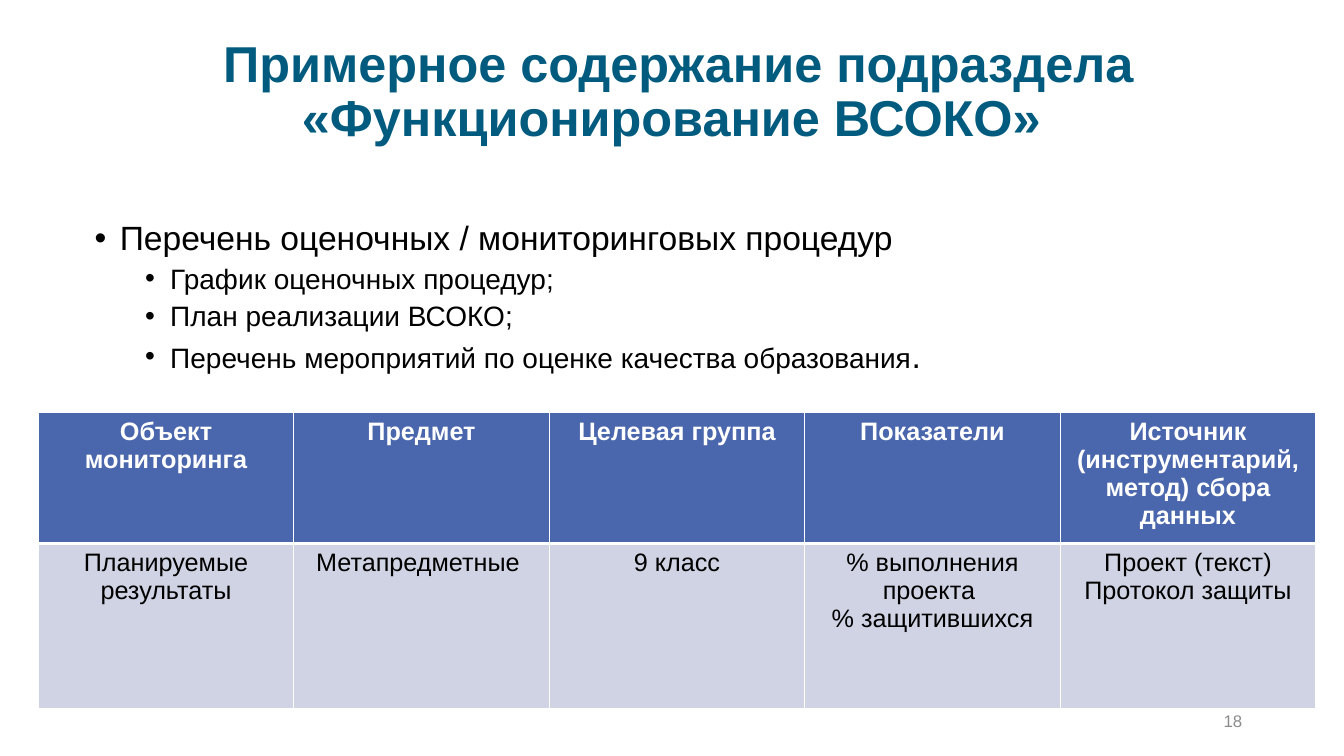
import pptx
import pptx.util
import pptx.dml.color
import pptx.enum.text
import pptx.oxml
import pptx.oxml.ns
from lxml import etree

Inches, Pt = pptx.util.Inches, pptx.util.Pt
ALIGN = pptx.enum.text.PP_ALIGN
ANCHOR = pptx.enum.text.MSO_ANCHOR
COLORS = {"title": "005B7E", "text": "000000", "muted": "8C8C8C",
          "white": "FFFFFF", "header": "4A66AC", "row": "D0D3E3"}

BULLETS = [
    (0, [("Перечень оценочных / мониторинговых процедур", 24)]),
    (1, [("График оценочных процедур;", 20)]),
    (1, [("План реализации ВСОКО;", 20)]),
    (1, [("Перечень мероприятий по оценке качества образования", 20), (".", 24)]),
]
HEADERS = ["Объект мониторинга", "Предмет", "Целевая группа", "Показатели",
           "Источник (инструментарий, метод) сбора данных"]
RESULTS = ["Планируемые результаты", "Метапредметные ", "9 класс",
           "% выполнения проекта \n% защитившихся",
           "Проект (текст)\nПротокол защиты"]


def rgb(name):
    return pptx.dml.color.RGBColor.from_string(COLORS[name])


def add_text(p, text, size=18, color="text", bold=False, align=None):
    r = p.add_run()
    r.text = text
    r.font.name = "Arial"
    r.font.size = Pt(size)
    r.font.bold = bold
    r.font.color.rgb = rgb(color)
    if align is not None:
        p.alignment = align


def add_bullet(p, level):
    p.level = level
    pPr = p._p.get_or_add_pPr()
    pPr.set("marL", str(Inches(0.25 + 0.5 * level)))
    pPr.set("indent", str(Inches(-0.25)))
    ns = pptx.oxml.ns.qn
    etree.SubElement(pPr, ns("a:buFont")).set("typeface", "Arial")
    etree.SubElement(pPr, ns("a:buChar")).set("char", "•")


def set_borders(cell, top, bottom):
    tcPr = cell._tc.get_or_add_tcPr()
    sides = {"L": 1, "R": 1, "T": top, "B": bottom}
    for i, (side, width) in enumerate(sides.items()):
        tcPr.insert(i, pptx.oxml.parse_xml(
            f'<a:ln{side} {pptx.oxml.ns.nsdecls("a")} w="{Pt(width)}">'
            f'<a:solidFill><a:srgbClr val="{COLORS["white"]}"/></a:solidFill>'
            f'</a:ln{side}>'))


def place_title(slide, x, y, w, h):
    sp = slide.shapes.title
    sp.left, sp.top, sp.width, sp.height = map(Inches, (x, y, w, h))
    tf = sp.text_frame
    tf.word_wrap = True
    tf.auto_size = pptx.enum.text.MSO_AUTO_SIZE.NONE
    tf.vertical_anchor = ANCHOR.MIDDLE
    p = tf.paragraphs[0]
    p.line_spacing = 0.9
    add_text(p, "Примерное содержание подраздела «Функционирование ВСОКО» ",
             size=36, color="title", bold=True, align=ALIGN.CENTER)


def add_box(slide, x, y, w, h):
    tf = slide.shapes.add_textbox(*map(Inches, (x, y, w, h))).text_frame
    tf.word_wrap = True
    return tf


def add_procedures(slide, x, y, w, h):
    tf = add_box(slide, x, y, w, h)
    for i, (level, parts) in enumerate(BULLETS):
        p = tf.add_paragraph() if i else tf.paragraphs[0]
        add_bullet(p, level)
        p.line_spacing = 0.9
        p.space_before = Pt(5 if i else 0)
        for text, size in parts:
            add_text(p, text, size=size)


def add_monitoring_table(slide, x, y, w, heights):
    shape = slide.shapes.add_table(
        2, len(HEADERS), *map(Inches, (x, y, w, sum(heights))))
    table = shape.table
    for col in table.columns:
        col.width = Inches(w / len(HEADERS))
    rows = [(HEADERS, "header", "white", True, 1, 3),
            (RESULTS, "row", "text", False, 3, 1)]
    for r, (texts, fill, color, bold, top, bottom) in enumerate(rows):
        table.rows[r].height = Inches(heights[r])
        for c, text in enumerate(texts):
            cell = table.cell(r, c)
            cell.fill.solid()
            cell.fill.fore_color.rgb = rgb(fill)
            set_borders(cell, top, bottom)
            tf = cell.text_frame
            for i, line in enumerate(text.split("\n")):
                p = tf.add_paragraph() if i else tf.paragraphs[0]
                add_text(p, line, color=color, bold=bold, align=ALIGN.CENTER)


def add_page_number(slide, x, y, w, h):
    tf = add_box(slide, x, y, w, h)
    tf.vertical_anchor = ANCHOR.MIDDLE
    add_text(tf.paragraphs[0], "18", size=12, color="muted", align=ALIGN.RIGHT)


def main():
    prs = pptx.Presentation()
    prs.slide_width, prs.slide_height = Inches(13.33), Inches(7.5)
    slide = prs.slides.add_slide(prs.slide_layouts[5])
    place_title(slide, 0.98, 0.2, 11.5, 1.45)
    add_procedures(slide, 0.84, 2.15, 11.5, 1.74)
    add_page_number(slide, 9.42, 6.95, 3, 0.4)
    add_monitoring_table(slide, 0.38, 4.09, 12.67, (1.21, 1.64))
    prs.save("out.pptx")


if __name__ == "__main__":
    main()
